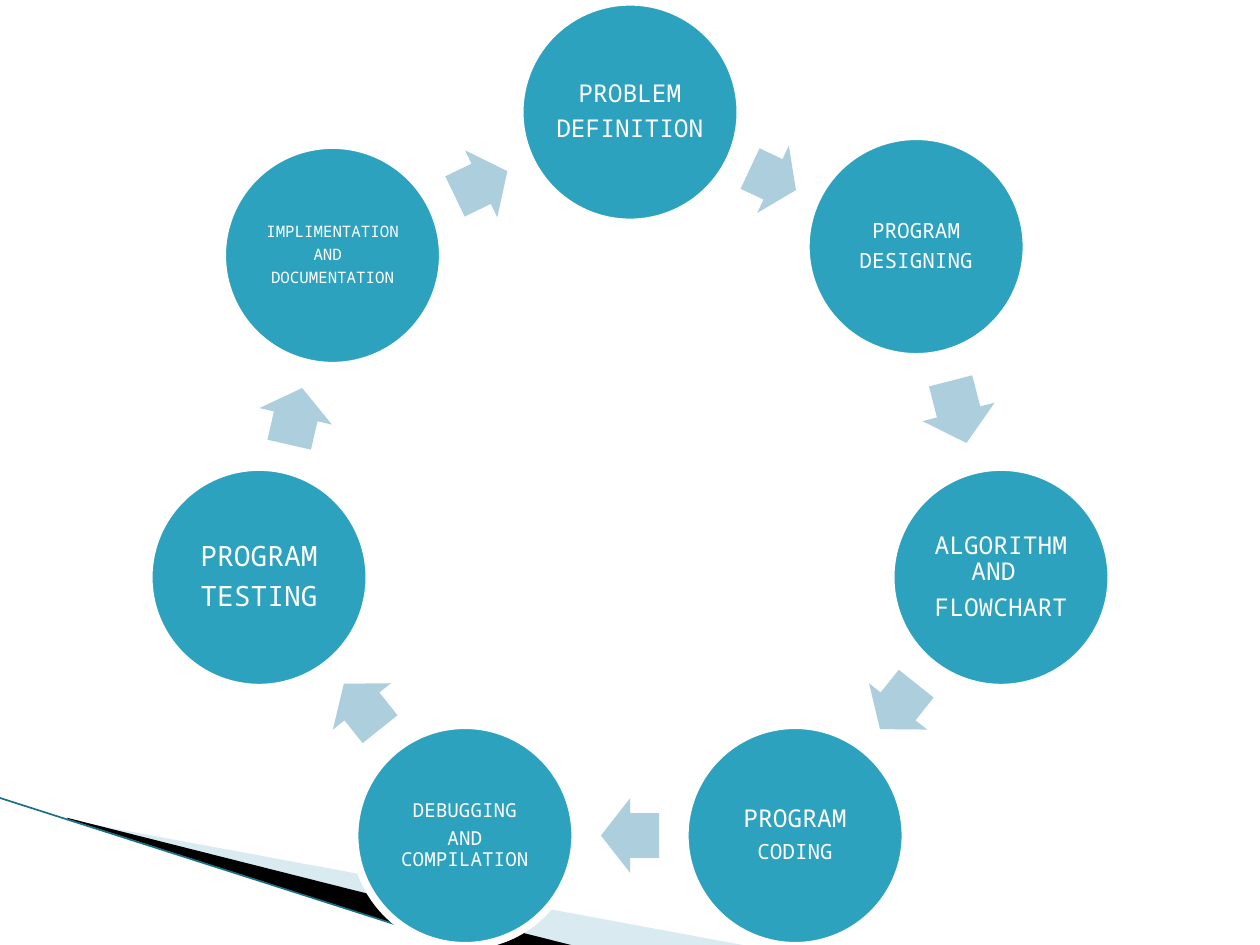
import math
from lxml import etree
from pptx import Presentation
from pptx.dml.color import RGBColor
from pptx.enum import shapes, text
from pptx.oxml import ns
from pptx.util import Inches, Pt

# Content: one stage per circle, clockwise from the top; each line is (words, size)
STAGES = [
    [("PROBLEM", 14), ("DEFINITION", 14)],
    [("PROGRAM", 12), ("DESIGNING", 12)],
    [("ALGORITHM AND ", 14), ("FLOWCHART", 14)],
    [("PROGRAM", 14), ("CODING", 12)],
    [("DEBUGGING", 11), ("AND COMPILATION", 11)],
    [("PROGRAM", 16), ("TESTING", 16)],
    [("IMPLIMENTATION", 9), ("AND ", 9), ("DOCUMENTATION", 9)],
]
NUDGES = {1: (-0.09, -0.07)}  # the second stage sits a little inside the ring
SWOOSHES = [  # colour, opacity in percent, corner points
    ("A0CBDC", 40, [(0.55, 6.51), (5.95, 7.51), (4.56, 7.51), (0.55, 6.5)]),
    ("000000", 100, [(0.53, 6.49), (4.57, 7.51), (3.72, 7.52), (0.54, 6.5)]),
]
FONT = "Noto Sans Mono"
CENTER_X, CENTER_Y, RADIUS = 5, 3.91, 3.02
DIAMETER = 1.75
ARROW_HEIGHT, ARROW_SHARE = 0.59, 0.53  # an arrow fills this share of its gap


def rgb(code):
    return RGBColor.from_string(code)


def paint(shape, color):
    shape.shadow.inherit = False
    shape.fill.solid()
    shape.fill.fore_color.rgb = rgb(color)
    shape.line.fill.background()


def add_centered(page, kind, x, y, width, height, color):
    shape = page.shapes.add_shape(kind, Inches(x - width / 2), Inches(y - height / 2),
                                  Inches(width), Inches(height))
    paint(shape, color)
    return shape


def add_swoosh(page, color, opacity, points):
    corners = [(Inches(x), Inches(y)) for x, y in points]
    builder = page.shapes.build_freeform(*corners[0])
    builder.add_line_segments(corners[1:])
    swoosh = builder.convert_to_shape()
    paint(swoosh, color)
    if opacity < 100:
        fill_color = swoosh.fill._xPr.find(ns.qn("a:solidFill"))[0]
        etree.SubElement(fill_color, ns.qn("a:alpha"), val=str(opacity * 1000))


def add_stage(page, center, lines):
    circle = add_centered(page, shapes.MSO_SHAPE.OVAL, *center, DIAMETER, DIAMETER, "2DA2BF")
    circle.line.color.rgb = rgb("FFFFFF")
    circle.line.width = Pt(4.33)
    frame = circle.text_frame
    frame.word_wrap = True
    frame.vertical_anchor = text.MSO_ANCHOR.MIDDLE
    frame.margin_left = frame.margin_right = Inches(0.02)
    frame.margin_top = frame.margin_bottom = Inches(0.02)
    for index, (words, size) in enumerate(lines):
        para = frame.paragraphs[0] if index == 0 else frame.add_paragraph()
        para.alignment = text.PP_ALIGN.CENTER
        para.line_spacing = 0.9
        para.space_after = Pt(0.36 * size)
        span = para.add_run()
        span.text = words
        span.font.name = FONT
        span.font.size = Pt(size)
        span.font.color.rgb = rgb("FFFFFF")


def add_arrow(page, start, end):
    dx, dy = end[0] - start[0], end[1] - start[1]
    length = ARROW_SHARE * (math.hypot(dx, dy) - DIAMETER)
    arrow = add_centered(page, shapes.MSO_SHAPE.RIGHT_ARROW, start[0] + dx / 2,
                         start[1] + dy / 2, length, ARROW_HEIGHT, "ADCEDC")
    arrow.adjustments[0], arrow.adjustments[1] = 0.6, 0.5
    arrow.rotation = math.degrees(math.atan2(dy, dx)) % 360


def main():
    deck = Presentation()
    deck.slide_width, deck.slide_height = Inches(10), Inches(7.5)
    page = deck.slides.add_slide(deck.slide_layouts[6])

    # Corner decoration
    for swoosh in SWOOSHES:
        add_swoosh(page, *swoosh)
    edge = page.shapes.add_connector(shapes.MSO_CONNECTOR.STRAIGHT, Inches(-0.01),
                                     Inches(6.33), Inches(3.71), Inches(7.52))
    edge.line.color.rgb = rgb("1A7085")
    edge.line.width = Pt(0.95)
    etree.SubElement(edge._element.spPr, ns.qn("a:effectLst"))

    # Ring of stages, each followed by an arrow to the next
    centers = []
    for index in range(len(STAGES)):
        angle = 2 * math.pi * index / len(STAGES)
        nudge_x, nudge_y = NUDGES.get(index, (0, 0))
        centers.append((CENTER_X + RADIUS * math.sin(angle) + nudge_x,
                        CENTER_Y - RADIUS * math.cos(angle) + nudge_y))
    for index, lines in enumerate(STAGES):
        add_stage(page, centers[index], lines)
        add_arrow(page, centers[index], centers[(index + 1) % len(STAGES)])

    deck.save("out.pptx")


if __name__ == "__main__":
    main()
